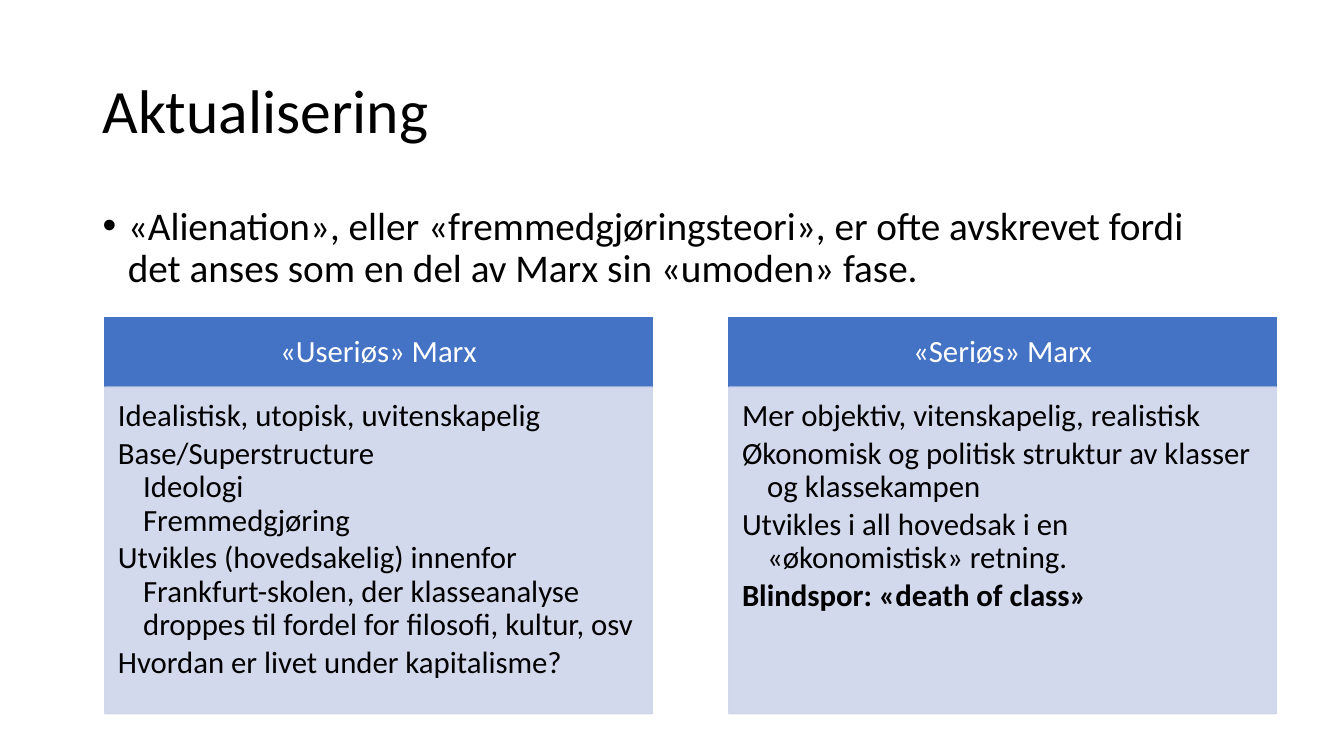
from lxml.etree import SubElement
from pptx import Presentation
from pptx.dml.color import RGBColor
from pptx.enum.shapes import MSO_SHAPE
from pptx.enum.text import MSO_ANCHOR, PP_ALIGN
from pptx.oxml.ns import qn
from pptx.util import Inches, Pt

TITLE = "Aktualisering"
INTRO = ("«Alienation», eller «fremmedgjøringsteori», er ofte avskrevet fordi "
         "det anses som en del av Marx sin «umoden» fase.")
COLUMNS = [
    ("«Useriøs» Marx", [
        "Idealistisk, utopisk, uvitenskapelig",
        "Base/Superstructure\nIdeologi\nFremmedgjøring",
        "Utvikles (hovedsakelig) innenfor Frankfurt-skolen, der klasseanalyse "
        "droppes til fordel for filosofi, kultur, osv",
        "Hvordan er livet under kapitalisme?",
    ]),
    ("«Seriøs» Marx", [
        "Mer objektiv, vitenskapelig, realistisk",
        "Økonomisk og politisk struktur av klasser og klassekampen",
        "Utvikles i all hovedsak i en «økonomistisk» retning.",
        "Blindspor: «death of class»",
    ]),
]
BOLD_LINES = {"Blindspor: «death of class»"}

COLORS = {"text": "000000", "header": "4472C4", "header_text": "FFFFFF", "panel": "CFD5EA"}
FONT = "Calibri"
HANG = 0.25
PANEL_ALPHA = 90

# Inches
WIDTH, HEIGHT = 13.33, 7.5
MARGIN, TEXT_WIDTH = 0.92, 11.5
COLUMN_LEFT, COLUMN_WIDTH, COLUMN_STEP = 1.04, 5.43, 6.19
HEADER_TOP, HEADER_HEIGHT, PANEL_HEIGHT = 3.15, 0.69, 3.24


def fill_text(shape, lines, size, color="text", insets=(0.1, 0.05, 0.1, 0.05),
              anchor=MSO_ANCHOR.TOP, align=PP_ALIGN.LEFT, after=0, hanging=False, bullet=None):
    frame = shape.text_frame
    frame.word_wrap = True
    frame.vertical_anchor = anchor
    for side, inset in zip(("left", "top", "right", "bottom"), insets):
        setattr(frame, f"margin_{side}", Inches(inset))
    for index, line in enumerate(lines):
        para = frame.add_paragraph() if index else frame.paragraphs[0]
        para.text = line
        props = para._p.get_or_add_pPr()
        if hanging:
            props.set("marL", str(Inches(HANG)))
            props.set("indent", str(-Inches(HANG)))
        if bullet:
            SubElement(props, qn("a:buFont"), typeface="Arial")
            SubElement(props, qn("a:buChar"), char=bullet)
        layout = {"alignment": align, "line_spacing": 0.9,
                  "space_before": Pt(0), "space_after": Pt(after)}
        for name, value in layout.items():
            setattr(para, name, value)
        for span in para.runs:
            style = {"name": FONT, "size": Pt(size), "bold": line in BOLD_LINES}
            for name, value in style.items():
                setattr(span.font, name, value)
            span.font.color.rgb = RGBColor.from_string(COLORS[color])


def add_text(page, top, height, lines, size, **layout):
    box = page.shapes.add_textbox(*map(Inches, (MARGIN, top, TEXT_WIDTH, height)))
    fill_text(box, lines, size, **layout)


def add_block(page, left, top, height, color, alpha=100):
    """Add a column-wide rectangle; alpha is the opacity in percent."""
    block = page.shapes.add_shape(
        MSO_SHAPE.RECTANGLE, *map(Inches, (left, top, COLUMN_WIDTH, height)))
    block.shadow.inherit = False
    block.fill.solid()
    block.line.width = Pt(1)
    for paint in (block.fill.fore_color, block.line.color):
        paint.rgb = RGBColor.from_string(COLORS[color])
    if alpha < 100:
        for paint in block._element.spPr.iter(qn("a:srgbClr")):
            SubElement(paint, qn("a:alpha"), val=str(alpha * 1000))
    return block


def main():
    deck = Presentation()
    deck.slide_width, deck.slide_height = Inches(WIDTH), Inches(HEIGHT)
    page = deck.slides.add_slide(deck.slide_layouts[6])

    add_text(page, 0.4, 1.45, [TITLE], 44, anchor=MSO_ANCHOR.MIDDLE)
    add_text(page, 2, 1.13, [INTRO], 28, hanging=True, bullet="•")

    for index, (heading, points) in enumerate(COLUMNS):
        left = COLUMN_LEFT + index * COLUMN_STEP
        header = add_block(page, left, HEADER_TOP, HEADER_HEIGHT, "header")
        fill_text(header, [heading], 22, "header_text", (0.17, 0.1, 0.17, 0.1),
                  MSO_ANCHOR.MIDDLE, PP_ALIGN.CENTER)
        panel = add_block(page, left, HEADER_TOP + HEADER_HEIGHT, PANEL_HEIGHT,
                          "panel", PANEL_ALPHA)
        fill_text(panel, points, 22, insets=(0.13, 0.13, 0.17, 0.19),
                  after=3.3, hanging=True)

    deck.save("out.pptx")


if __name__ == "__main__":
    main()
